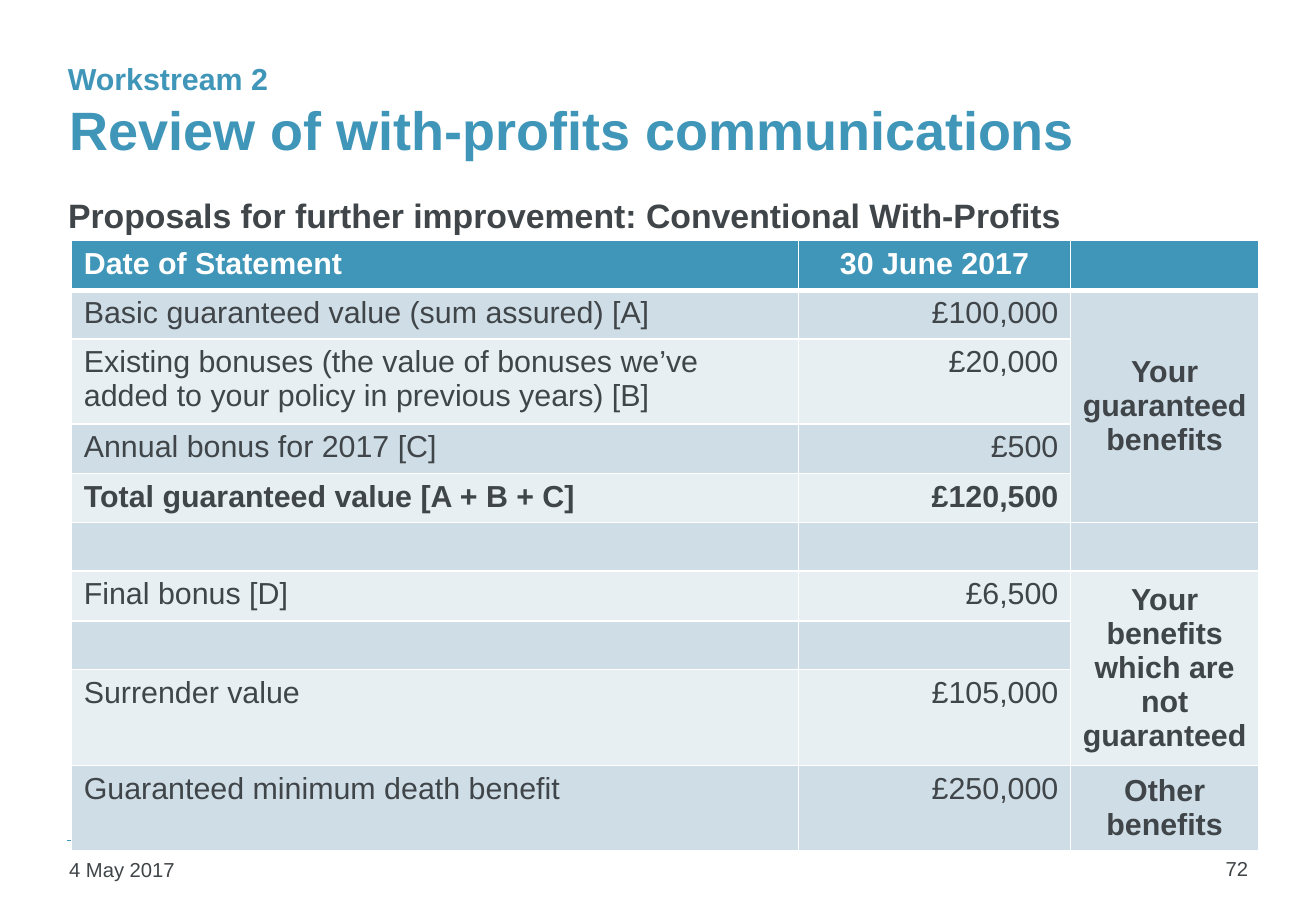
from pptx import Presentation
from pptx.dml.color import RGBColor
from pptx.enum.shapes import MSO_CONNECTOR
from pptx.enum.text import MSO_ANCHOR, MSO_AUTO_SIZE, PP_ALIGN
from pptx.oxml.ns import qn
from pptx.util import Pt
from lxml import etree

EMU_PER_PX = 9144  # 100 px to the inch
LEFT, CENTER, RIGHT = PP_ALIGN.LEFT, PP_ALIGN.CENTER, PP_ALIGN.RIGHT
TOP, MIDDLE = MSO_ANCHOR.TOP, MSO_ANCHOR.MIDDLE
STRAIGHT = MSO_CONNECTOR.STRAIGHT
NO_AUTOFIT = MSO_AUTO_SIZE.NONE

FONT = "Arial"
COLORS = {
    "accent": "4096B8",
    "text": "3F4548",
    "white": "FFFFFF",
    "band_dark": "CFDDE6",
    "band_light": "E8EFF3",
}

COLUMN_WIDTHS = [598, 224, 155]
ROW_HEIGHTS = [41, 40, 70, 41, 40, 40, 41, 40, 79, 70]
HEADINGS = ["Date of Statement", "30 June 2017"]
STATEMENT = [
    ("Basic guaranteed value (sum assured) [A]", "£100,000"),
    ("Existing bonuses (the value of bonuses we’ve added to your policy "
     "in previous years) [B]", "£20,000"),
    ("Annual bonus for 2017 [C]", "£500"),
    ("Total guaranteed value [A + B + C]", "£120,500"),
    ("", ""),
    ("Final bonus [D]", "£6,500"),
    ("", ""),
    ("Surrender value", "£105,000"),
    ("Guaranteed minimum death benefit", "£250,000"),
]
TOTAL_ROW = 4
# first row, last row, label
BENEFIT_GROUPS = [
    (1, 4, "Your guaranteed benefits"),
    (6, 8, "Your benefits which are not guaranteed"),
    (9, 9, "Other benefits"),
]


def px(length):
    return length * EMU_PER_PX


def rgb(name):
    return RGBColor.from_string(COLORS[name])


def write(frame, text, size=18, color="text", bold=False, align=LEFT):
    paragraph = frame.paragraphs[0]
    paragraph.alignment = align
    paragraph.space_before = Pt(0)
    run = paragraph.add_run()
    run.text = text
    run.font.name = FONT
    run.font.size = Pt(size)
    run.font.bold = bold
    run.font.color.rgb = rgb(color)
    return paragraph


def place(shape, left, top, width, height):
    shape.left, shape.top = px(left), px(top)
    shape.width, shape.height = px(width), px(height)


def fill_placeholder(placeholder, box, text, anchor, **style):
    place(placeholder, *box)
    frame = placeholder.text_frame
    frame.auto_size = NO_AUTOFIT
    frame.vertical_anchor = anchor
    return write(frame, text, bold=True, **style)


def remove_bullet(paragraph):
    properties = paragraph._p.get_or_add_pPr()
    properties.set("marL", "0")
    properties.set("indent", "0")
    etree.SubElement(properties, qn("a:buNone"))


def add_label(slide, box, text, wrap=True, **style):
    frame = slide.shapes.add_textbox(*map(px, box)).text_frame
    frame.word_wrap = wrap
    write(frame, text, **style)


def add_rule(slide, left, right, y):
    rule = slide.shapes.add_connector(STRAIGHT, px(left), px(y), px(right), px(y))
    rule.line.color.rgb = rgb("accent")
    rule.line.width = Pt(1)
    etree.SubElement(rule._element.spPr, qn("a:effectLst"))


def set_borders(cell, top=1, bottom=1):
    properties = cell._tc.get_or_add_tcPr()
    for side, width in (("L", 1), ("R", 1), ("T", top), ("B", bottom)):
        line = etree.SubElement(properties, qn(f"a:ln{side}"), w=str(Pt(width)))
        fill = etree.SubElement(line, qn("a:solidFill"))
        etree.SubElement(fill, qn("a:srgbClr"), val=COLORS["white"])


def format_cell(cell, row):
    """Give a cell its row's band colour and white borders."""
    set_borders(cell, top=3 if row == 1 else 1, bottom=3 if row == 0 else 1)
    cell.fill.solid()
    band = "band_dark" if row % 2 else "band_light"
    cell.fill.fore_color.rgb = rgb("accent" if row == 0 else band)


def add_statement(slide, left, top):
    table = slide.shapes.add_table(
        len(ROW_HEIGHTS), len(COLUMN_WIDTHS), px(left), px(top),
        px(sum(COLUMN_WIDTHS)), px(sum(ROW_HEIGHTS))).table
    for column, width in zip(table.columns, COLUMN_WIDTHS):
        column.width = px(width)
    for index, (row, height) in enumerate(zip(table.rows, ROW_HEIGHTS)):
        row.height = px(height)
        for cell in row.cells:
            format_cell(cell, index)

    for column, (heading, align) in enumerate(zip(HEADINGS, (LEFT, CENTER))):
        write(table.cell(0, column).text_frame, heading,
              color="white", bold=True, align=align)
    for row, entry in enumerate(STATEMENT, start=1):
        for column, (text, align) in enumerate(zip(entry, (LEFT, RIGHT))):
            if text:
                write(table.cell(row, column).text_frame, text,
                      bold=row == TOTAL_ROW, align=align)
    for first, last, label in BENEFIT_GROUPS:
        group = table.cell(first, 2)
        if last > first:
            group.merge(table.cell(last, 2))
        group.vertical_anchor = MIDDLE
        write(group.text_frame, label, bold=True, align=CENTER)


def main():
    deck = Presentation()
    deck.slide_width, deck.slide_height = px(1083), px(750)
    slide = deck.slides.add_slide(deck.slide_layouts[1])
    title, body = slide.placeholders

    add_rule(slide, 55, 1028, 692)
    fill_placeholder(title, (47, 44, 982, 125),
                     "Review of with-profits communications", MIDDLE,
                     size=32, color="accent")
    subtitle = fill_placeholder(
        body, (46, 155, 982, 507),
        "Proposals for further improvement: Conventional With-Profits", TOP,
        size=20)
    remove_bullet(subtitle)
    add_label(slide, (47, 701, 239, 36), "4 May 2017", size=12)
    add_label(slide, (960, 700, 77, 37), "72", size=12, align=RIGHT)
    add_label(slide, (46, 45, 187, 40), "Workstream 2", wrap=False,
              color="accent", bold=True)
    add_statement(slide, 59, 198)
    deck.save("out.pptx")


if __name__ == "__main__":
    main()
